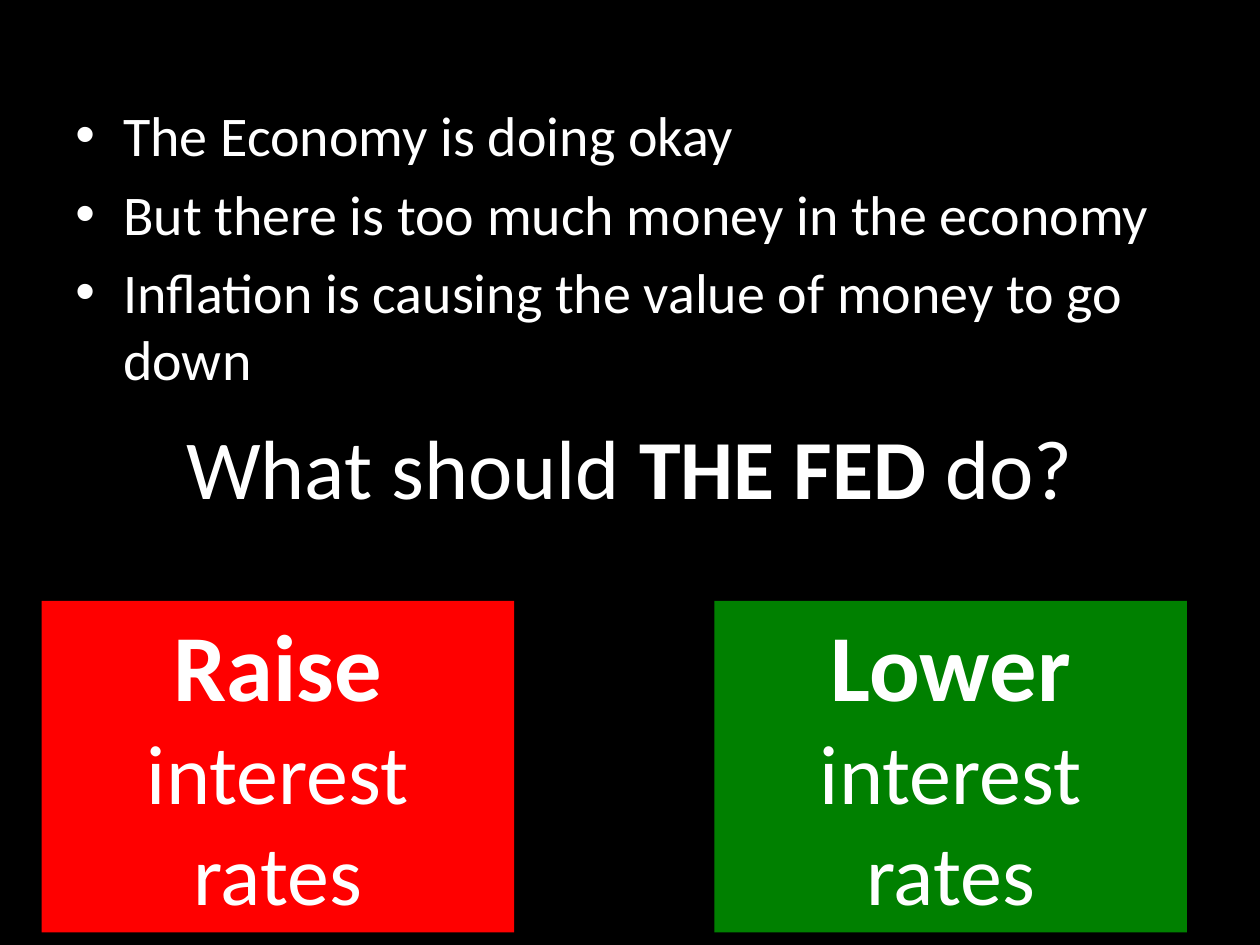
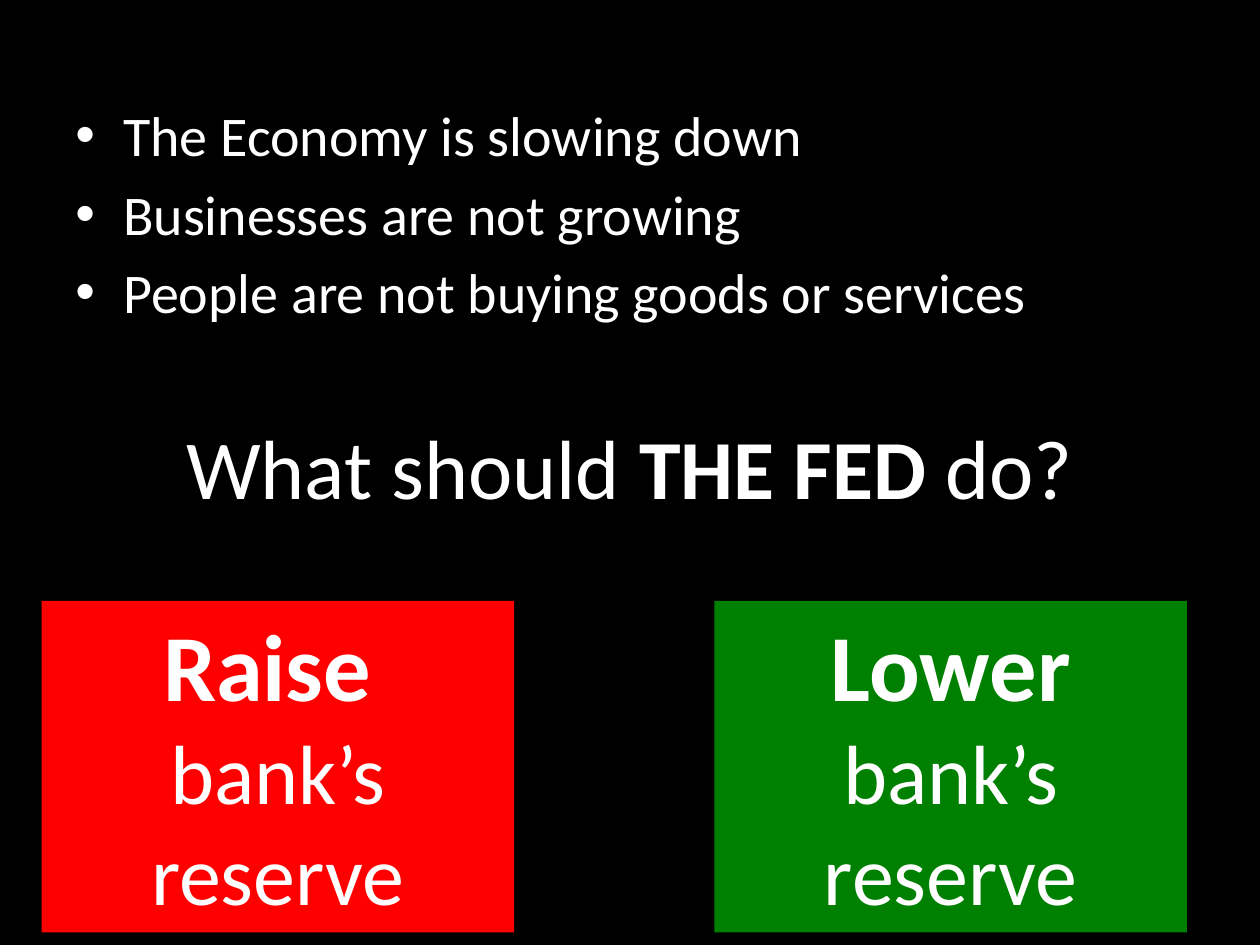
from dataclasses import dataclass

import lxml.etree
import pptx
import pptx.dml.color
import pptx.enum.shapes
import pptx.enum.text
import pptx.oxml.ns
import pptx.util

Inches = pptx.util.Inches
Pt = pptx.util.Pt

COLORS = {
    "background": "000000",
    "text": "FFFFFF",
    "raise": "FF0000",
    "lower": "008000",
}
FONT = "Calibri"
BULLET_SIZE, BODY_SIZE, VERB_SIZE = 32, 48, 54
BULLET_INDENT = Inches(0.38)
ANSWER_TOP, ANSWER_WIDTH, ANSWER_HEIGHT = Inches(4.77), Inches(3.75), Inches(2.63)


@dataclass(frozen=True)
class Span:
    text: str
    size: int = BODY_SIZE
    bold: bool = False


Lines = list[list[Span]]


@dataclass(frozen=True)
class Scenario:
    facts: list[str]
    raise_answer: Lines
    lower_answer: Lines


QUESTION: Lines = [[Span("What should "), Span("THE FED ", bold=True), Span("do?")]]
RAISE = Span("Raise ", VERB_SIZE, True)
LOWER = Span("Lower ", VERB_SIZE, True)

SCENARIOS = [
    Scenario(
        [
            "The Economy is doing okay",
            "But there is too much money in the economy",
            "Inflation is causing the value of money to go down",
        ],
        [[RAISE, Span("interest rates")]],
        [[LOWER, Span("interest rates")]],
    ),
    Scenario(
        [
            "The Economy is slowing down",
            "Businesses are not growing",
            "People are not buying goods or services",
        ],
        [[RAISE], [Span("bank’s reserve")]],
        [[LOWER, Span("bank’s")], [Span("reserve")]],
    ),
]


def color(name: str) -> pptx.dml.color.RGBColor:
    return pptx.dml.color.RGBColor.from_string(COLORS[name])


def write_lines(frame, lines: Lines, align=pptx.enum.text.PP_ALIGN.CENTER) -> None:
    """Fill a text frame with one paragraph for each list of spans."""
    for index, spans in enumerate(lines):
        para = frame.add_paragraph() if index else frame.paragraphs[0]
        para.alignment = align
        for span in spans:
            run = para.add_run()
            run.text = span.text
            run.font.name = FONT
            run.font.size = Pt(span.size)
            run.font.bold = span.bold
            run.font.color.rgb = color("text")


def add_bullet(para) -> None:
    properties = para._p.get_or_add_pPr()
    properties.set("marL", str(BULLET_INDENT))
    properties.set("indent", str(-BULLET_INDENT))
    font = lxml.etree.SubElement(properties, pptx.oxml.ns.qn("a:buFont"))
    font.set("typeface", "Arial")
    bullet = lxml.etree.SubElement(properties, pptx.oxml.ns.qn("a:buChar"))
    bullet.set("char", "•")


def add_facts(page, facts: list[str]) -> None:
    box = page.shapes.add_textbox(Inches(0.5), Inches(0.75), Inches(9), Inches(2.42))
    frame = box.text_frame
    frame.word_wrap = True
    lines = [[Span(fact, BULLET_SIZE)] for fact in facts]
    write_lines(frame, lines, pptx.enum.text.PP_ALIGN.LEFT)
    for para in frame.paragraphs:
        para.space_before = Pt(0.2 * BULLET_SIZE)
        add_bullet(para)


def add_question(page) -> None:
    box = page.shapes.add_textbox(Inches(1.34), Inches(3.25), Inches(7.31), Inches(0.91))
    box.text_frame.word_wrap = False
    box.text_frame.auto_size = pptx.enum.text.MSO_AUTO_SIZE.SHAPE_TO_FIT_TEXT
    write_lines(box.text_frame, QUESTION)


def add_answer(page, left: pptx.util.Length, fill: str, lines: Lines) -> None:
    box = page.shapes.add_shape(
        pptx.enum.shapes.MSO_SHAPE.RECTANGLE, left, ANSWER_TOP, ANSWER_WIDTH, ANSWER_HEIGHT
    )
    box.shadow.inherit = False
    box.fill.solid()
    box.fill.fore_color.rgb = color(fill)
    box.line.fill.background()
    frame = box.text_frame
    frame.word_wrap = True
    frame.auto_size = pptx.enum.text.MSO_AUTO_SIZE.SHAPE_TO_FIT_TEXT
    frame.vertical_anchor = pptx.enum.text.MSO_ANCHOR.TOP
    write_lines(frame, lines)


def add_scenario(deck, scenario: Scenario) -> None:
    page = deck.slides.add_slide(deck.slide_layouts[6])
    page.background.fill.solid()
    page.background.fill.fore_color.rgb = color("background")
    add_facts(page, scenario.facts)
    add_question(page)
    add_answer(page, Inches(0.33), "raise", scenario.raise_answer)
    add_answer(page, Inches(5.67), "lower", scenario.lower_answer)


def main() -> None:
    deck = pptx.Presentation()
    deck.slide_width = Inches(10)
    deck.slide_height = Inches(7.5)
    for scenario in SCENARIOS:
        add_scenario(deck, scenario)
    deck.save("out.pptx")


if __name__ == "__main__":
    main()
